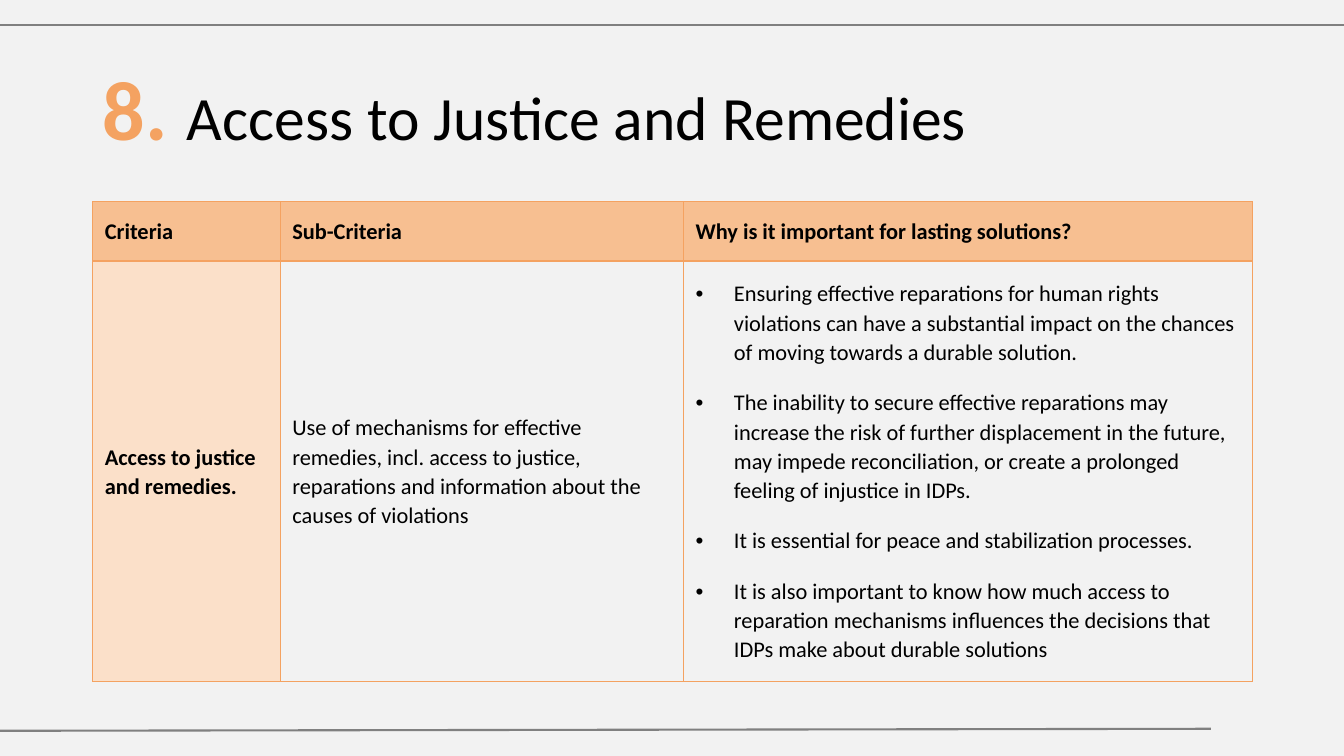
from lxml import etree
from pptx import Presentation
from pptx.dml.color import RGBColor
from pptx.enum.shapes import MSO_CONNECTOR
from pptx.enum.text import MSO_ANCHOR, MSO_AUTO_SIZE, PP_ALIGN
from pptx.oxml.ns import qn
from pptx.util import Inches, Pt

STRAIGHT = MSO_CONNECTOR.STRAIGHT
MIDDLE = MSO_ANCHOR.MIDDLE
NO_AUTOFIT = MSO_AUTO_SIZE.NONE
LEFT = PP_ALIGN.LEFT

BACKGROUND = RGBColor(0xF2, 0xF2, 0xF2)
GRAY = RGBColor(0x80, 0x80, 0x80)
BLACK = RGBColor(0x00, 0x00, 0x00)
ORANGE = RGBColor(0xF4, 0xA2, 0x61)
HEADER_ORANGE = RGBColor(0xF7, 0xBF, 0x91)
PALE_ORANGE = RGBColor(0xFB, 0xE0, 0xC9)

FONT = "Calibri"
BULLET_INDENT = Inches(0.38)
COLUMN_WIDTHS = (1.86, 4, 5.64)
ROW_HEIGHTS = (0.59, 4.17)
CELL_FORMAT = {
    "margin_left": Inches(0.12),
    "margin_right": Inches(0.12),
    "margin_top": Inches(0.08),
    "margin_bottom": Inches(0.08),
    "vertical_anchor": MIDDLE,
}
HEADERS = ("Criteria", "Sub-Criteria", "Why is it important for lasting solutions?")
CRITERION = "Access to justice and remedies."
SUB_CRITERION = (
    "Use of mechanisms for effective remedies, incl. access to justice, "
    "reparations and information about the causes of violations"
)
REASONS = (
    "Ensuring effective reparations for human rights violations can have a "
    "substantial impact on the chances of moving towards a durable solution.",
    "The inability to secure effective reparations may increase the risk of "
    "further displacement in the future, may impede reconciliation, or create "
    "a prolonged feeling of injustice in IDPs.",
    "It is essential for peace and stabilization processes.",
    "It is also important to know how much access to reparation mechanisms "
    "influences the decisions that IDPs make about durable solutions",
)


def set_format(target, values):
    for name, value in values.items():
        setattr(target, name, value)


def add_run(paragraph, text, size, color, bold):
    run = paragraph.add_run()
    run.text = text
    set_format(run.font, {"name": FONT, "size": Pt(size), "bold": bold})
    run.font.color.rgb = color


def add_rule(slide, start_x, start_y, end_x, end_y):
    rule = slide.shapes.add_connector(
        STRAIGHT, Inches(start_x), Inches(start_y), Inches(end_x), Inches(end_y)
    )
    rule.line.color.rgb = GRAY
    rule.line.width = Pt(1.5)
    etree.SubElement(rule._element.spPr, qn("a:effectLst"))


def add_title(slide, left, top, width, height):
    title = slide.shapes.title
    set_format(title, {
        "left": Inches(left), "top": Inches(top),
        "width": Inches(width), "height": Inches(height),
    })
    set_format(title.text_frame, {
        "vertical_anchor": MIDDLE, "word_wrap": True, "auto_size": NO_AUTOFIT,
    })
    paragraph = title.text_frame.paragraphs[0]
    set_format(paragraph, {"alignment": LEFT, "line_spacing": 0.9})
    add_run(paragraph, "8. ", 60, ORANGE, True)
    add_run(paragraph, "Access to Justice and Remedies", 44, BLACK, False)


def add_borders(cell):
    properties = cell._tc.get_or_add_tcPr()
    for position, side in enumerate(("lnL", "lnR", "lnT", "lnB")):
        border = etree.Element(qn(f"a:{side}"), w=str(Pt(1)))
        fill = etree.SubElement(border, qn("a:solidFill"))
        etree.SubElement(fill, qn("a:srgbClr"), val=str(ORANGE))
        properties.insert(position, border)


def fill_cell(cell, texts, color=None, bold=False, bulleted=False):
    set_format(cell, CELL_FORMAT)
    if color is None:
        cell.fill.background()
    else:
        cell.fill.solid()
        cell.fill.fore_color.rgb = color
    add_borders(cell)
    for index, text in enumerate(texts):
        frame = cell.text_frame
        paragraph = frame.add_paragraph() if index else frame.paragraphs[0]
        set_format(paragraph, {
            "line_spacing": 1.07,
            "space_before": Pt(15 if index else 0),
            "space_after": Pt(0 if bulleted else 8),
        })
        if bulleted:
            properties = paragraph._p.get_or_add_pPr()
            properties.set("marL", str(BULLET_INDENT))
            properties.set("indent", str(-BULLET_INDENT))
            etree.SubElement(properties, qn("a:buFont"), typeface="Arial")
            etree.SubElement(properties, qn("a:buChar"), char="•")
        add_run(paragraph, text, 16, BLACK, bold)


def add_criteria_table(slide, left, top, width, height):
    table = slide.shapes.add_table(
        len(ROW_HEIGHTS), len(COLUMN_WIDTHS),
        Inches(left), Inches(top), Inches(width), Inches(height),
    ).table
    table.horz_banding = False
    for column, share in zip(table.columns, COLUMN_WIDTHS):
        column.width = Inches(width * share / sum(COLUMN_WIDTHS))
    for row, share in zip(table.rows, ROW_HEIGHTS):
        row.height = Inches(height * share / sum(ROW_HEIGHTS))
    for index, header in enumerate(HEADERS):
        fill_cell(table.cell(0, index), [header], HEADER_ORANGE, bold=True)
    fill_cell(table.cell(1, 0), [CRITERION], PALE_ORANGE, bold=True)
    fill_cell(table.cell(1, 1), [SUB_CRITERION])
    fill_cell(table.cell(1, 2), REASONS, bulleted=True)


def main():
    presentation = Presentation()
    presentation.slide_width = Inches(13.33)
    presentation.slide_height = Inches(7.5)
    slide = presentation.slides.add_slide(presentation.slide_layouts[5])
    slide.background.fill.solid()
    slide.background.fill.fore_color.rgb = BACKGROUND
    add_rule(slide, 0, 0.25, 13.33, 0.25)
    add_rule(slide, 0, 7.25, 12.01, 7.23)
    add_title(slide, 0.92, 0.4, 11.5, 1.45)
    add_criteria_table(slide, 0.92, 2, 11.5, 4.76)
    presentation.save("out.pptx")


if __name__ == "__main__":
    main()
